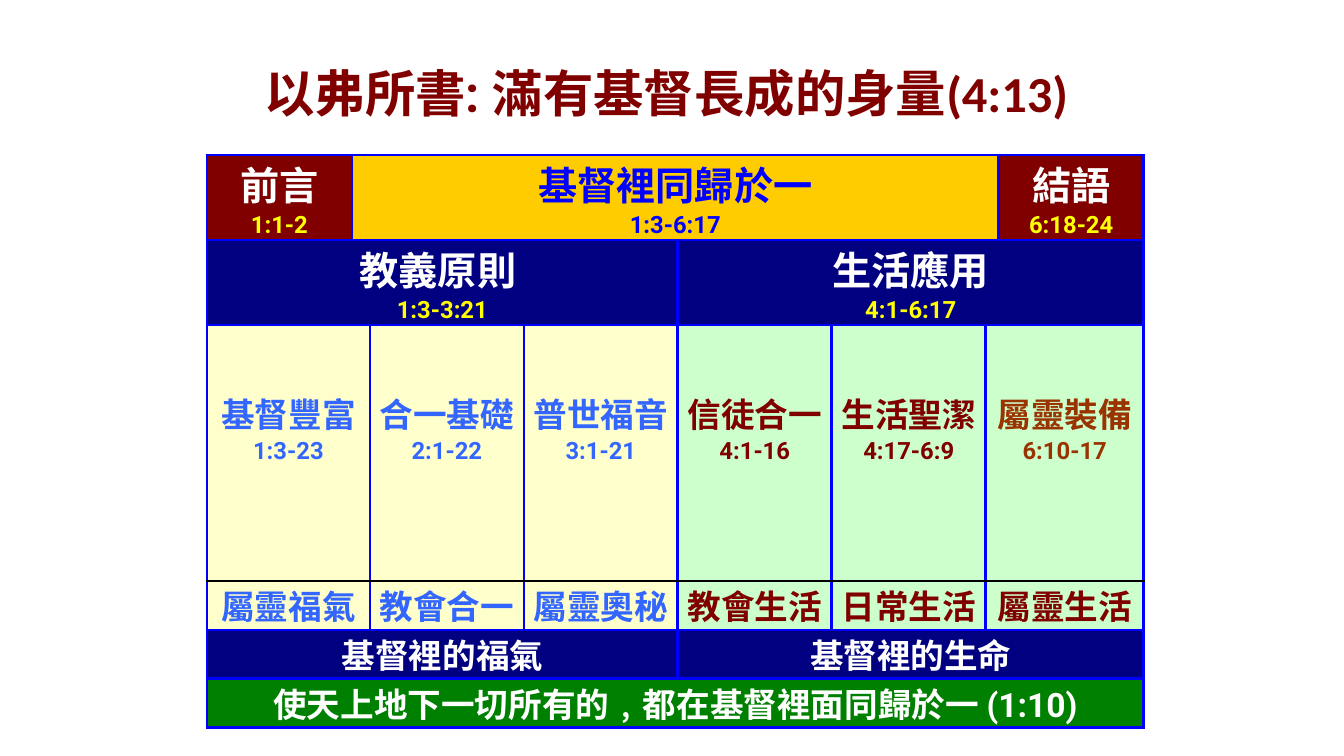
"""Build the outline slide of the book of Ephesians."""
from lxml.etree import SubElement
from pptx import Presentation
from pptx.dml.color import RGBColor
from pptx.enum.text import PP_ALIGN
from pptx.oxml.ns import qn
from pptx.util import Emu, Pt

PX = 914400 / 100.8
COLORS = {
    "maroon": "800000", "gold": "FFCC00", "navy": "000080", "cream": "FFFFCC",
    "mint": "CCFFCC", "green": "008000", "white": "FFFFFF", "yellow": "FFFF00",
    "blue": "0000FF", "sky": "3366FF", "brown": "993300", "black": "000000",
}
SERIF, SANS = "Times New Roman", "Roboto"


def px(length):
    return Emu(round(length * PX))


def write(paragraph, text, size, color, font=SERIF):
    paragraph.alignment = PP_ALIGN.CENTER
    run = paragraph.add_run()
    run.text = text
    run.font.size = Pt(size)
    run.font.name = font
    run.font.bold = True
    run.font.color.rgb = RGBColor.from_string(COLORS[color])


prs = Presentation()
prs.slide_width, prs.slide_height = px(1344), px(756)
slide = prs.slides.add_slide(prs.slide_layouts[6])

column_widths = [145, 17, 154, 154, 154, 154, 13, 145]
row_heights = [85, 85, 256, 49, 49, 48]
outline = slide.shapes.add_table(
    len(row_heights), len(column_widths), px(207), px(155),
    px(sum(column_widths)), px(sum(row_heights))).table
for column, width in zip(outline.columns, column_widths):
    column.width = px(width)
for row, height in zip(outline.rows, row_heights):
    row.height = px(height)

THEME_ROW, SUMMARY_ROW = 2, 3
sections = [
    (0, 0, 1, "maroon", "前言", "white", "1:1-2", "yellow"),
    (0, 1, 6, "gold", "基督裡同歸於一", "blue", "1:3-6:17", "blue"),
    (0, 7, 1, "maroon", "結語", "white", "6:18-24", "yellow"),
    (1, 0, 4, "navy", "教義原則 ", "white", "1:3-3:21", "yellow"),
    (1, 4, 4, "navy", "生活應用", "white", "4:1-6:17", "yellow"),
    (4, 0, 4, "navy", "基督裡的福氣", "white", None, None),
    (4, 4, 4, "navy", "基督裡的生命", "white", None, None),
    (5, 0, 8, "green", "使天上地下一切所有的﹐都在基督裡面同歸於一 ", "white", None, None),
]
themes = [
    (0, 2, "cream", "基督豐富", "1:3-23", "sky", "屬靈福氣", "sky"),
    (2, 1, "cream", "合一基礎", "2:1-22", "sky", "教會合一", "sky"),
    (3, 1, "cream", "普世福音", "3:1-21", "sky", "屬靈奧秘", "sky"),
    (4, 1, "mint", "信徒合一", "4:1-16", "maroon", "教會生活", "maroon"),
    (5, 1, "mint", "生活聖潔", "4:17-6:9", "maroon", "日常生活", "maroon"),
    (6, 2, "mint", "屬靈裝備", "6:10-17", "brown", "屬靈生活", "maroon"),
]
for col, span, fill, theme, verses, color, summary, summary_color in themes:
    sections.append((THEME_ROW, col, span, fill, theme, color, verses, color))
    sections.append((SUMMARY_ROW, col, span, fill, summary, summary_color, None, None))

for row, col, span, fill, heading, heading_color, verses, verses_color in sections:
    section = outline.cell(row, col)
    if span > 1:
        section.merge(outline.cell(row, col + span - 1))
    section.margin_left = section.margin_right = px(7)
    section.margin_top = px(64 if row == THEME_ROW else 0)
    section.margin_bottom = 0
    write(section.text_frame.paragraphs[0], heading, 28 if row < THEME_ROW else 24, heading_color)
    if verses:
        write(section.text_frame.add_paragraph(), verses, 17, verses_color, SANS)

    for part in range(col, col + span):
        cell = outline.cell(row, part)
        properties = cell._tc.get_or_add_tcPr()
        for side in ("lnL", "lnR", "lnT", "lnB"):
            thin = (row, side) in ((THEME_ROW, "lnB"), (SUMMARY_ROW, "lnT"))
            edge = SubElement(properties, qn(f"a:{side}"), w=str(Pt(1 if thin else 2.25)))
            ink = SubElement(edge, qn("a:solidFill"))
            SubElement(ink, qn("a:srgbClr"), val=COLORS["black" if thin else "blue"])
        cell.fill.solid()
        cell.fill.fore_color.rgb = RGBColor.from_string(COLORS[fill])

write(outline.cell(5, 0).text_frame.paragraphs[0], "(1:10)", 24, "white", SANS)

title = slide.shapes.add_textbox(px(237), px(57), px(870), px(72)).text_frame
title.word_wrap = False
write(title.paragraphs[0], "以弗所書: 滿有基督長成的身量", 36, "maroon", SANS)
write(title.paragraphs[0], "(4:13) ", 36, "maroon", "Calibri")

prs.save("out.pptx")
